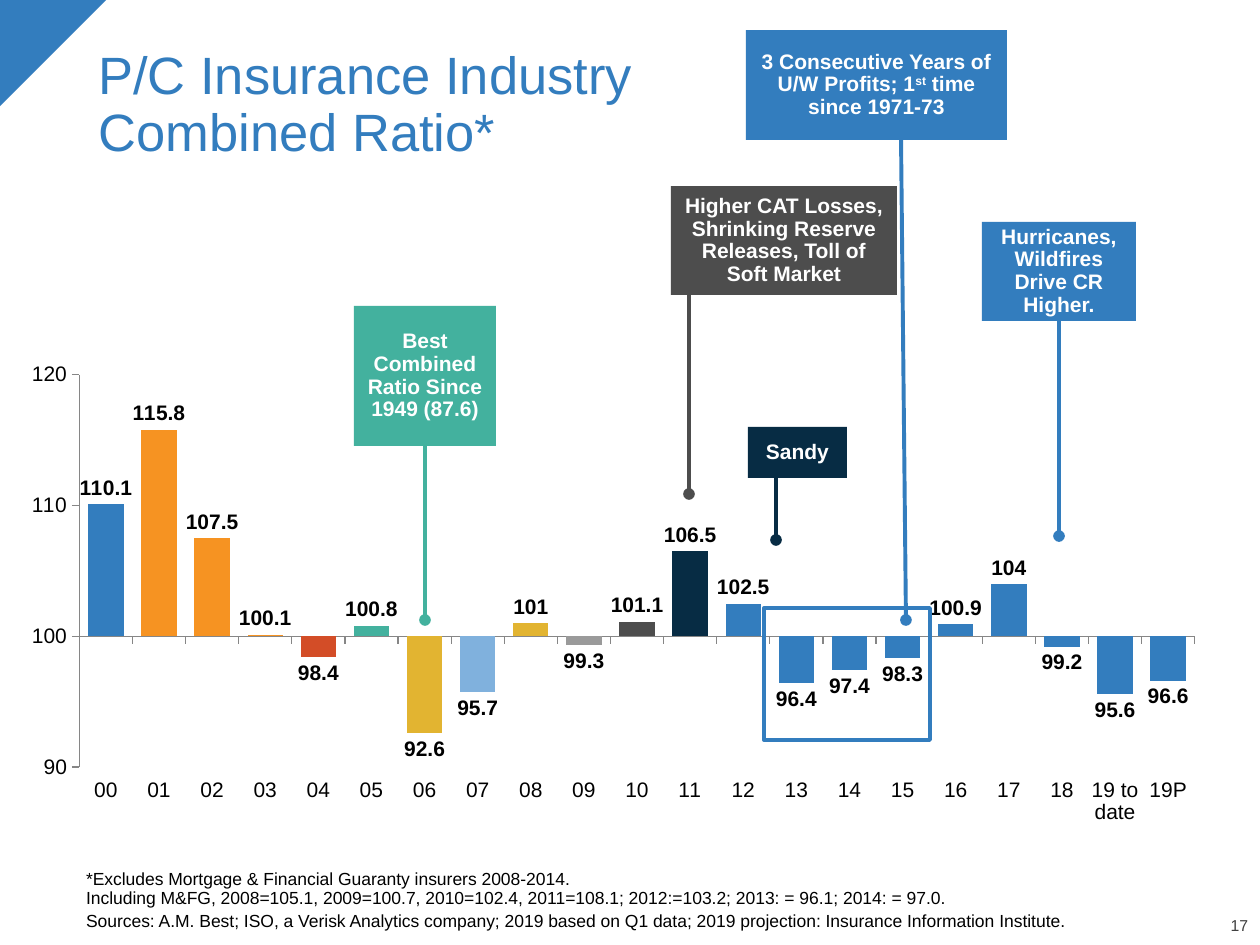
from lxml import etree
from pptx import Presentation, util as u
from pptx.chart.data import CategoryChartData
from pptx.dml.color import RGBColor
from pptx.enum import chart as ch, shapes, text
from pptx.oxml.ns import qn

BLUE = RGBColor(0x33, 0x7D, 0xBE)
ORANGE = RGBColor(0xF6, 0x93, 0x22)
RED = RGBColor(0xD3, 0x4D, 0x27)
TEAL = RGBColor(0x43, 0xB1, 0x9E)
GOLD = RGBColor(0xE2, 0xB4, 0x31)
SKY = RGBColor(0x80, 0xB1, 0xDD)
GREY = RGBColor(0x9A, 0x9A, 0x9A)
CHARCOAL = RGBColor(0x4D, 0x4D, 0x4D)
NAVY = RGBColor(0x07, 0x2C, 0x44)
AXIS = RGBColor(0x86, 0x86, 0x86)
FOLIO = RGBColor(0x40, 0x40, 0x40)
BLACK = RGBColor(0, 0, 0)
WHITE = RGBColor(255, 255, 255)

TITLE = "P/C Insurance Industry\vCombined Ratio*"
NOTES = [
    "*Excludes Mortgage & Financial Guaranty insurers 2008-2014.\v"
    "Including M&FG, 2008=105.1, 2009=100.7, 2010=102.4, 2011=108.1; "
    "2012:=103.2; 2013: = 96.1; 2014: = 97.0.",
    "Sources: A.M. Best; ISO, a Verisk Analytics company; 2019 based on Q1 data; "
    "2019 projection: Insurance Information Institute.",
]
RATIOS = [
    ("00", 110.1, BLUE), ("01", 115.8, ORANGE), ("02", 107.5, ORANGE),
    ("03", 100.1, ORANGE), ("04", 98.4, RED), ("05", 100.8, TEAL),
    ("06", 92.6, GOLD), ("07", 95.7, SKY), ("08", 101, GOLD),
    ("09", 99.3, GREY), ("10", 101.1, CHARCOAL), ("11", 106.5, NAVY),
    ("12", 102.5, BLUE), ("13", 96.4, BLUE), ("14", 97.4, BLUE),
    ("15", 98.3, BLUE), ("16", 100.9, BLUE), ("17", 104, BLUE),
    ("18", 99.2, BLUE), ("19 to date", 95.6, BLUE), ("19P", 96.6, BLUE),
]
# Runs, colour, box, pointer start (None: middle of the bottom side), pointer end
CALLOUTS = [
    (["Hurricanes, Wildfires Drive CR Higher."], BLUE,
     (982, 222, 154, 99), None, (1059, 536)),
    (["Best Combined Ratio Since 1949 (87.6)"], TEAL,
     (354, 306, 142, 140), None, (425, 620)),
    (["Higher CAT Losses, Shrinking Reserve Releases, Toll of Soft Market"], CHARCOAL,
     (671, 186, 226, 109), (689, 295), (689, 494)),
    (["Sandy"], NAVY, (748, 427, 99, 51), (776, 474), (776, 540)),
    (["3 Consecutive Years of U/W Profits; 1", "st", " time since 1971-73"], BLUE,
     (746, 30, 261, 110), (901, 136), (906, 620)),
]


def px(*lengths):
    return [round(n * 914400 / 126) for n in lengths]


def set_font(font, size, color, bold=False):
    font.name, font.size, font.bold = "Arial", u.Pt(size), bold
    font.color.rgb = color


def add_box(kind, box, fill=None, line=None):
    shape = slide.shapes.add_shape(kind, *px(*box))
    shape.shadow.inherit = False
    if fill is None:
        shape.fill.background()
    else:
        shape.fill.solid()
        shape.fill.fore_color.rgb = fill
    if line is None:
        shape.line.fill.background()
    else:
        shape.line.color.rgb = line
        shape.line.width = u.Pt(2.25)
    return shape


def add_text(box, paragraphs, size, color, inset=True, align=text.PP_ALIGN.LEFT):
    frame = slide.shapes.add_textbox(*px(*box)).text_frame
    frame.word_wrap = True
    frame.vertical_anchor = text.MSO_ANCHOR.BOTTOM
    if not inset:
        frame.margin_left = frame.margin_right = frame.margin_top = frame.margin_bottom = 0
    frame.text = "\n".join(paragraphs)
    for i, paragraph in enumerate(frame.paragraphs):
        paragraph.alignment, paragraph.line_spacing = align, 0.9
        if i:
            paragraph.space_before = u.Pt(2)
        for run in paragraph.runs:
            set_font(run.font, size, color)


def add_ratio_chart():
    data = CategoryChartData()
    data.categories = [year for year, _, _ in RATIOS]
    data.add_series("Series 1", [ratio for _, ratio, _ in RATIOS])
    chart = slide.shapes.add_chart(
        ch.XL_CHART_TYPE.COLUMN_CLUSTERED, *px(28, 340, 1168, 484), data).chart
    chart.has_legend = chart.has_title = False
    set_font(chart.font, 12, BLACK)

    for axis in (chart.category_axis, chart.value_axis):
        axis.has_major_gridlines = False
        axis.major_tick_mark = ch.XL_TICK_MARK.OUTSIDE
        axis.minor_tick_mark = ch.XL_TICK_MARK.NONE
        axis.tick_label_position = ch.XL_TICK_LABEL_POSITION.LOW
        axis.format.line.color.rgb = AXIS
        set_font(axis.tick_labels.font, 12, BLACK)
    scale = chart.value_axis
    scale.minimum_scale, scale.maximum_scale, scale.major_unit = 90, 120, 10
    scale.crosses_at = 100
    scale.tick_labels.number_format = "0"
    scale.tick_labels.number_format_is_linked = False

    plot = chart.plots[0]
    plot.gap_width, plot.vary_by_categories = 50, False
    plot.has_data_labels = True
    labels = plot.data_labels
    labels.show_value = True
    labels.position = ch.XL_LABEL_POSITION.OUTSIDE_END
    set_font(labels.font, 12, BLACK, bold=True)
    columns = plot.series[0]
    columns.invert_if_negative = False
    columns.format.fill.solid()
    columns.format.fill.fore_color.rgb = BLUE
    for i, (_, _, color) in enumerate(RATIOS):
        if color != BLUE:
            fill = columns.points[i].format.fill
            fill.solid()
            fill.fore_color.rgb = color

    area = chart._chartSpace.chart.plotArea
    for old in area.findall(qn("c:layout")):
        area.remove(old)
    layout = etree.Element(qn("c:layout"))
    manual = etree.SubElement(layout, qn("c:manualLayout"))
    for tag, value in [("layoutTarget", "inner"), ("xMode", "edge"), ("yMode", "edge"),
                       ("x", 0.044), ("y", 0.072), ("w", 0.955), ("h", 0.812)]:
        etree.SubElement(manual, qn("c:" + tag)).set("val", str(value))
    area.insert(0, layout)


def add_callout(runs, color, box, start, end):
    shape = add_box(shapes.MSO_SHAPE.RECTANGLE, box, color)
    frame = shape.text_frame
    frame.word_wrap = True
    frame.vertical_anchor = text.MSO_ANCHOR.MIDDLE
    frame.margin_top = frame.margin_bottom = 0
    paragraph = frame.paragraphs[0]
    paragraph.alignment, paragraph.line_spacing = text.PP_ALIGN.CENTER, 0.9
    for wording in runs:
        run = paragraph.add_run()
        run.text = wording
        set_font(run.font, 12, WHITE, bold=True)
        if wording == "st":
            run.font._element.set("baseline", "30000")

    left, top, width, height = box
    origin = start or (left + width // 2, top + height)
    pointer = slide.shapes.add_connector(
        shapes.MSO_CONNECTOR.STRAIGHT, *px(*origin, *end))
    if start is None:
        pointer.begin_connect(shape, 2)
    pointer.line.color.rgb = color
    pointer.line.width = u.Pt(2.25)
    etree.SubElement(pointer.line._get_or_add_ln(), qn("a:tailEnd")).set("type", "oval")
    etree.SubElement(pointer._element.spPr, qn("a:effectLst"))


prs = Presentation()
prs.slide_width, prs.slide_height = px(1260, 945)
slide = prs.slides.add_slide(prs.slide_layouts[6])

corner = add_box(shapes.MSO_SHAPE.RIGHT_TRIANGLE, (0, 0, 106, 106), BLUE)
corner.rotation = 90
add_text((1188, 918, 60, 17), ["17"], 9, FOLIO, inset=False, align=text.PP_ALIGN.RIGHT)
add_text((86, 38, 735, 131), [TITLE], 30, BLUE)
add_text((86, 874, 1165, 57), NOTES, 10, BLACK, inset=False)
add_ratio_chart()
for callout in CALLOUTS:
    add_callout(*callout)
add_box(shapes.MSO_SHAPE.RECTANGLE, (764, 608, 166, 132), line=BLUE)

prs.save("out.pptx")
